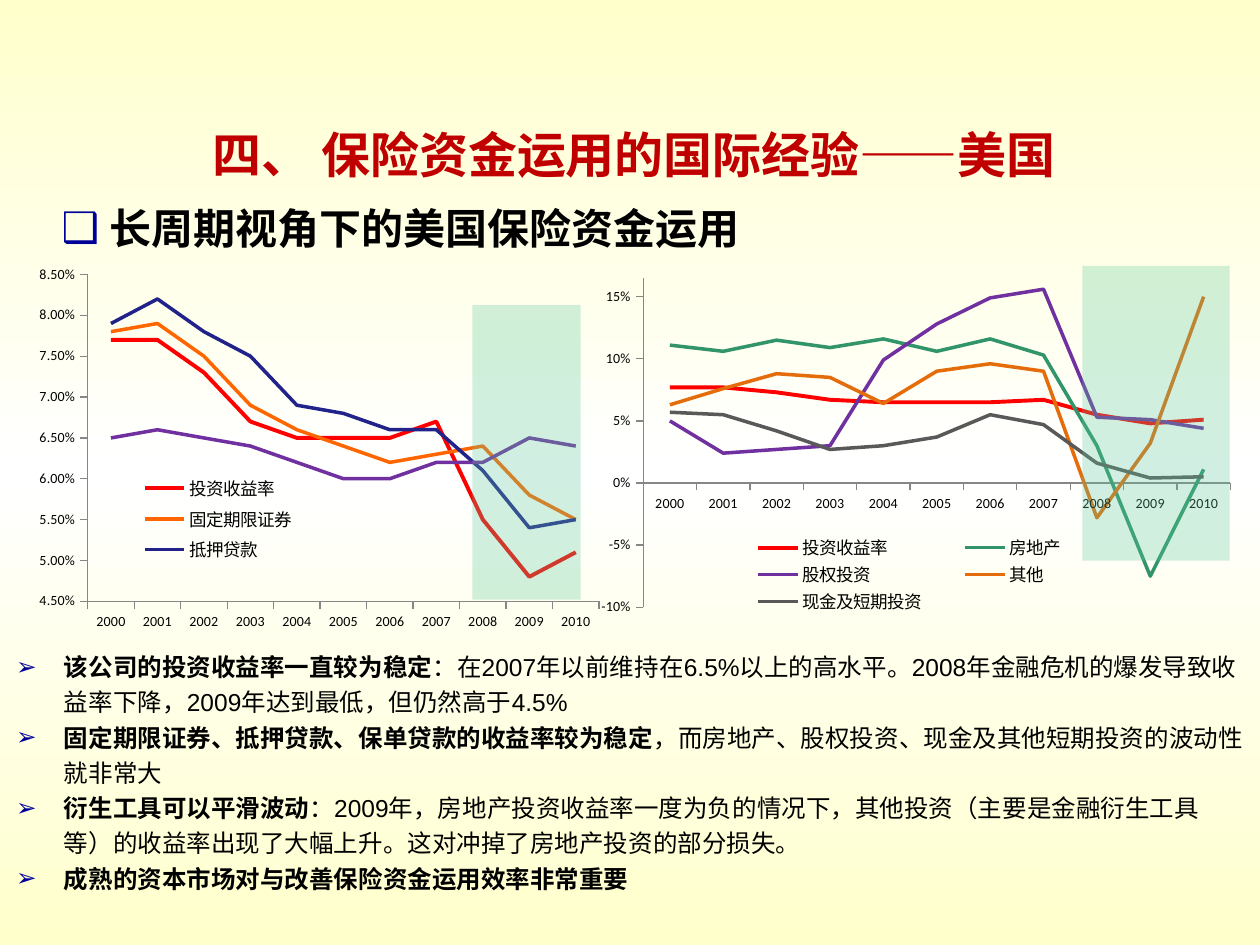
from dataclasses import dataclass

from lxml.etree import SubElement
from pptx import Presentation
from pptx.chart.data import CategoryChartData
from pptx.dml.color import RGBColor as Rgb
from pptx.enum.chart import XL_CHART_TYPE as ChartType, XL_LEGEND_POSITION as LegendPosition, \
    XL_MARKER_STYLE as Marker, XL_TICK_MARK as Tick
from pptx.enum.shapes import MSO_SHAPE as Shape
from pptx.enum.text import MSO_ANCHOR as Anchor, MSO_AUTO_SIZE as AutoSize, PP_ALIGN as Align
from pptx.oxml import parse_xml
from pptx.oxml.ns import nsdecls, qn
from pptx.util import Inches, Pt


@dataclass(frozen=True)
class Theme:
    font: str = "Arial"
    chart_font: str = "Calibri"
    text: str = "000000"
    title: str = "C00000"
    bullet: str = "000099"
    axis: str = "868686"
    crisis: str = "60C99C"
    edge: str = "FFFFCC"
    middle: str = "FFFFFF"
    title_size: float = 28
    heading_size: float = 24
    body_size: float = 14
    legend_size: float = 10
    axis_size: float = 8


@dataclass(frozen=True)
class Frame:
    left: float
    top: float
    width: float
    height: float

    def lengths(self) -> list:
        return [Inches(v) for v in (self.left, self.top, self.width, self.height)]


@dataclass(frozen=True)
class Series:
    name: str
    color: str
    percents: tuple
    width: float = 2


@dataclass(frozen=True)
class LineChart:
    frame: Frame
    plot: Frame  # fractions of the chart
    legend: Frame  # fractions of the chart
    low: float
    high: float
    step: float
    number_format: str
    series: tuple
    unlisted: tuple = ()  # series left out of the legend


@dataclass(frozen=True)
class Point:
    lead: str
    rest: str = ""


THEME = Theme()
YEARS = [str(year) for year in range(2000, 2011)]
RETURN = Series("投资收益率", "FF0000", (7.7, 7.7, 7.3, 6.7, 6.5, 6.5, 6.5, 6.7, 5.5, 4.8, 5.1), 2.25)
CHARTS = (
    LineChart(
        Frame(0.31, 2.11, 4.45, 3), Frame(0.087, 0.023, 0.913, 0.865), Frame(0.15, 0.54, 0.34, 0.26),
        0.045, 0.085, 0.005, "0.00%",
        (RETURN,
         Series("固定期限证券", "FF6600", (7.8, 7.9, 7.5, 6.9, 6.6, 6.4, 6.2, 6.3, 6.4, 5.8, 5.5)),
         Series("抵押贷款", "22228B", (7.9, 8.2, 7.8, 7.5, 6.9, 6.8, 6.6, 6.6, 6.1, 5.4, 5.5)),
         Series("保单贷款", "7030A0", (6.5, 6.6, 6.5, 6.4, 6.2, 6, 6, 6.2, 6.2, 6.5, 6.4))),
        unlisted=(3,)),
    LineChart(
        Frame(4.77, 2.03, 5, 2.86), Frame(0.067, 0.062, 0.933, 0.914), Frame(0.19, 0.77, 0.6, 0.23),
        -0.1, 0.165, 0.05, "0%",
        (RETURN,
         Series("房地产", "32946A", (11.1, 10.6, 11.5, 10.9, 11.6, 10.6, 11.6, 10.3, 3, -7.5, 1.1)),
         Series("股权投资", "7030A0", (5, 2.4, 2.7, 3, 9.9, 12.8, 14.9, 15.6, 5.3, 5.1, 4.4)),
         Series("其他", "E46C0A", (6.3, 7.6, 8.8, 8.5, 6.4, 9, 9.6, 9, -2.8, 3.2, 15)),
         Series("现金及短期投资", "595959", (5.7, 5.5, 4.2, 2.7, 3, 3.7, 5.5, 4.7, 1.6, 0.4, 0.5)))),
)
CRISIS_BANDS = (Frame(8.59, 2.11, 1.17, 2.34), Frame(3.75, 2.42, 0.86, 2.34))
POINTS = (
    Point("该公司的投资收益率一直较为稳定",
          "：在2007年以前维持在6.5%以上的高水平。2008年金融危机的爆发导致收益率下降，2009年达到最低，但仍然高于4.5%"),
    Point("固定期限证券、抵押贷款、保单贷款的收益率较为稳定",
          "，而房地产、股权投资、现金及其他短期投资的波动性就非常大"),
    Point("衍生工具可以平滑波动",
          "：2009年，房地产投资收益率一度为负的情况下，其他投资（主要是金融衍生工具等）的收益率出现了大幅上升。"
          "这对冲掉了房地产投资的部分损失。"),
    Point("成熟的资本市场对与改善保险资金运用效率非常重要"),
)


def set_font(font, size: float, color: str = THEME.text, name: str = THEME.font) -> None:
    font.size, font.name = Pt(size), name
    font.color.rgb = Rgb.from_string(color)


def paint_background(slide) -> None:
    fill = slide.background.fill
    fill.gradient()
    fill.gradient_angle = 270
    stops = next(slide.element.iter(qn("a:gsLst")))
    for stop in list(stops):
        stops.remove(stop)
    for position, color in ((0, THEME.edge), (50000, THEME.middle), (100000, THEME.edge)):
        stop = SubElement(stops, qn("a:gs"), pos=str(position))
        SubElement(stop, qn("a:srgbClr"), val=color)


def add_bullet(para, symbol: str, indent: float) -> None:
    """Give the paragraph a coloured bullet hanging 0.38 inches left of its text."""
    props = para._p.get_or_add_pPr()
    props.set("marL", str(Inches(indent)))
    props.set("indent", str(Inches(-0.38)))
    color = SubElement(props, qn("a:buClr"))
    SubElement(color, qn("a:srgbClr"), val=THEME.bullet)
    SubElement(props, qn("a:buFont"), typeface=THEME.font)
    SubElement(props, qn("a:buChar"), char=symbol)


def add_bulleted_box(slide, frame: Frame, points: tuple, symbol: str, indent: float, size: float) -> None:
    text = slide.shapes.add_textbox(*frame.lengths()).text_frame
    text.word_wrap = True
    for index, point in enumerate(points):
        para = text.add_paragraph() if index else text.paragraphs[0]
        para.line_spacing = 1.2
        add_bullet(para, symbol, indent)
        set_font(para.font, size)
        for words, bold in ((point.lead, True), (point.rest, False)):
            if words:
                span = para.add_run()
                span.text, span.font.bold = words, bold


def place(element, frame: Frame, inner: bool = False) -> None:
    """Set a manual layout, in fractions of the chart, on a plot area or legend."""
    for old in element.findall(qn("c:layout")):
        element.remove(old)
    target = '<c:layoutTarget val="inner"/>' if inner else ""
    layout = parse_xml(
        f'<c:layout {nsdecls("c")}><c:manualLayout>{target}<c:xMode val="edge"/><c:yMode val="edge"/>'
        f'<c:x val="{frame.left}"/><c:y val="{frame.top}"/><c:w val="{frame.width}"/>'
        f'<c:h val="{frame.height}"/></c:manualLayout></c:layout>')
    element.insert(0 if inner else 1, layout)


def add_line_chart(slide, model: LineChart) -> None:
    data = CategoryChartData(number_format=model.number_format)
    data.categories = YEARS
    for series in model.series:
        data.add_series(series.name, [round(value / 100, 3) for value in series.percents])
    chart = slide.shapes.add_chart(ChartType.LINE, *model.frame.lengths(), data).chart
    chart.has_title = False
    set_font(chart.font, THEME.axis_size, name=THEME.chart_font)
    for line, series in zip(chart.plots[0].series, model.series):
        line.smooth = False
        line.marker.style = Marker.NONE
        line.format.line.color.rgb = Rgb.from_string(series.color)
        line.format.line.width = Pt(series.width)
    chart.plots[0].vary_by_categories = False
    for axis in (chart.category_axis, chart.value_axis):
        axis.has_major_gridlines = False
        axis.major_tick_mark, axis.minor_tick_mark = Tick.OUTSIDE, Tick.NONE
        axis.format.line.color.rgb = Rgb.from_string(THEME.axis)
        set_font(axis.tick_labels.font, THEME.axis_size, name=THEME.chart_font)
    values = chart.value_axis
    values.minimum_scale, values.maximum_scale, values.major_unit = model.low, model.high, model.step
    values.tick_labels.number_format = model.number_format
    values.tick_labels.number_format_is_linked = False
    chart.has_legend = True
    legend = chart.legend
    legend.position, legend.include_in_layout = LegendPosition.RIGHT, False
    set_font(legend.font, THEME.legend_size, name=THEME.chart_font)
    place(legend._element, model.legend)
    for index in model.unlisted:
        legend._element.insert(1, parse_xml(
            f'<c:legendEntry {nsdecls("c")}><c:idx val="{index}"/><c:delete val="1"/></c:legendEntry>'))
    place(chart._chartSpace.chart.plotArea, model.plot, inner=True)


def add_crisis_band(slide, frame: Frame) -> None:
    band = slide.shapes.add_shape(Shape.RECTANGLE, *frame.lengths())
    band.shadow.inherit = False
    band.line.fill.background()
    band.fill.solid()
    band.fill.fore_color.rgb = Rgb.from_string(THEME.crisis)
    color = next(band._element.spPr.iter(qn("a:srgbClr")))
    SubElement(color, qn("a:alpha"), val="29000")


def set_title(slide, words: str, frame: Frame) -> None:
    title = slide.shapes.title
    title.left, title.top, title.width, title.height = frame.lengths()
    text = title.text_frame
    text.text, text.word_wrap = words, True
    text.auto_size, text.vertical_anchor = AutoSize.NONE, Anchor.MIDDLE
    para = text.paragraphs[0]
    para.alignment = Align.CENTER
    set_font(para.font, THEME.title_size, THEME.title)
    para.font.bold = True


def main() -> None:
    deck = Presentation()
    deck.slide_width, deck.slide_height = Inches(10), Inches(7.5)
    slide = deck.slides.add_slide(deck.slide_layouts[5])
    paint_background(slide)
    set_title(slide, "四、 保险资金运用的国际经验——美国", Frame(0.62, 0.94, 8.82, 0.57))
    heading = (Point("长周期视角下的美国保险资金运用"),)
    add_bulleted_box(slide, Frame(0.39, 1.48, 7.58, 0.55), heading, "❑", 0.38, THEME.heading_size)
    add_bulleted_box(slide, Frame(0, 5.08, 10, 2.27), POINTS, "➢", 0.41, THEME.body_size)
    for model in CHARTS:
        add_line_chart(slide, model)
    for frame in CRISIS_BANDS:
        add_crisis_band(slide, frame)
    deck.save("out.pptx")


if __name__ == "__main__":
    main()
